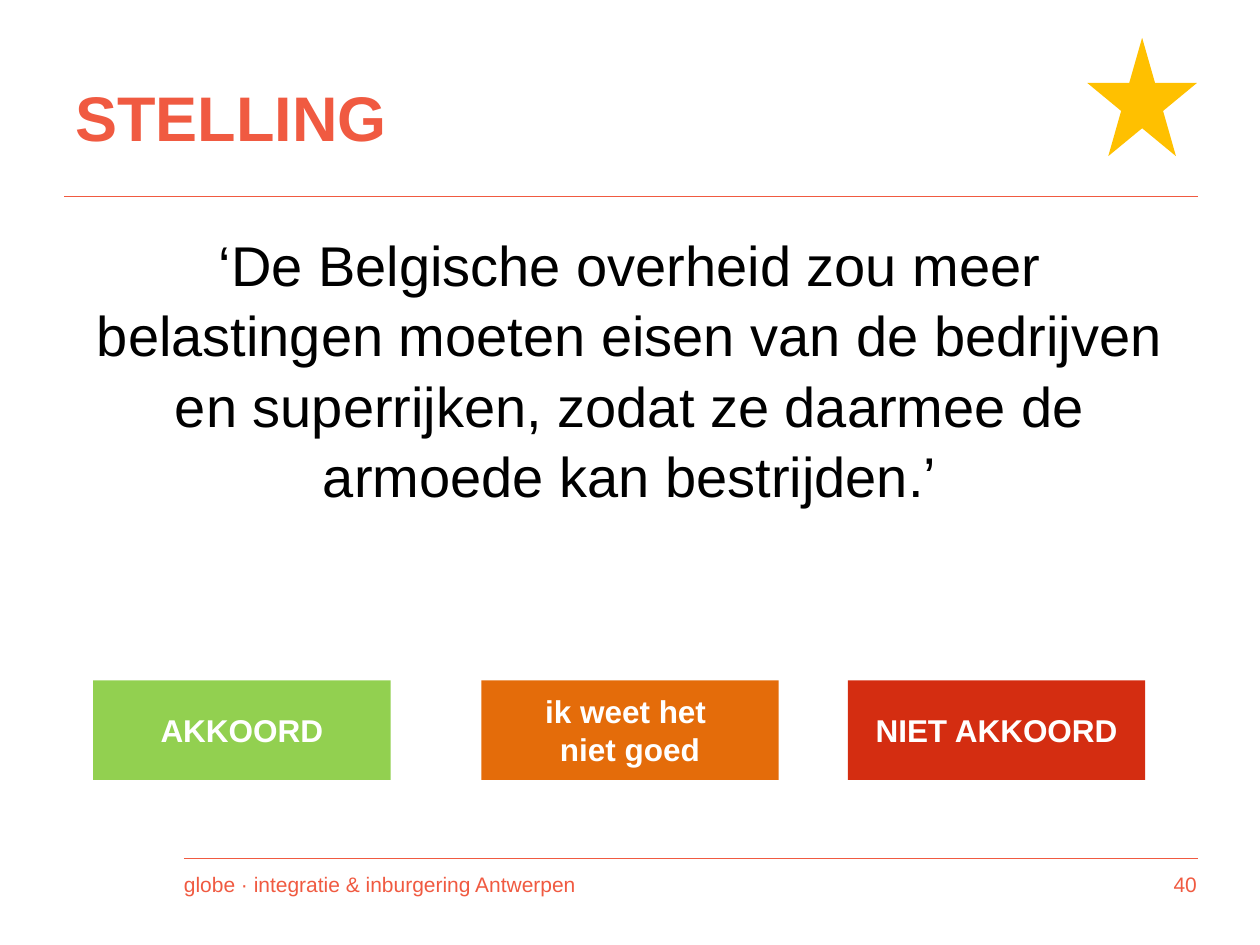
"""Build the STELLING slide: a statement with three answer buttons."""
from dataclasses import dataclass

from lxml import etree
from pptx import Presentation
from pptx.dml.color import RGBColor
from pptx.enum.shapes import MSO_CONNECTOR, MSO_SHAPE
from pptx.enum.text import MSO_ANCHOR, MSO_AUTO_SIZE, PP_ALIGN
from pptx.oxml import parse_xml
from pptx.oxml.ns import nsdecls, qn
from pptx.util import Inches, Pt

STRAIGHT = MSO_CONNECTOR.STRAIGHT
RECTANGLE, STAR = MSO_SHAPE.RECTANGLE, MSO_SHAPE.STAR_5_POINT
TOP, MIDDLE = MSO_ANCHOR.TOP, MSO_ANCHOR.MIDDLE
NO_FIT = MSO_AUTO_SIZE.NONE
LEFT, CENTER, RIGHT = PP_ALIGN.LEFT, PP_ALIGN.CENTER, PP_ALIGN.RIGHT


@dataclass(frozen=True)
class Theme:
    """Colours and type sizes of the slide."""
    font: str = "Arial"
    accent: str = "F05A41"
    ink: str = "000000"
    light: str = "FFFFFF"
    agree: str = "92D050"
    unsure: str = "E46C0A"
    disagree: str = "D42D11"
    star: str = "FFC000"
    title_size: int = 36
    body_size: int = 32
    button_size: int = 18
    footer_size: int = 12


theme = Theme()


def place(shape, left, top, width, height):
    """Move and size a shape, in inches."""
    shape.left, shape.top = Inches(left), Inches(top)
    shape.width, shape.height = Inches(width), Inches(height)


def write(shape, lines, size, color, align, anchor=MIDDLE, bold=False):
    """Fill a shape with one paragraph per line in a single style."""
    frame = shape.text_frame
    frame.text = "\n".join(lines)
    frame.word_wrap = True
    frame.auto_size = NO_FIT
    frame.vertical_anchor = anchor
    for para in frame.paragraphs:
        para.alignment = align
        para.font.name = theme.font
        para.font.size = Pt(size)
        para.font.bold = bold
        para.font.color.rgb = RGBColor.from_string(color)


deck = Presentation()
deck.slide_width, deck.slide_height = Inches(10), Inches(7.5)
page = deck.slides.add_slide(deck.slide_layouts[1])

margin, right_edge = 0.5, 9.5
content_width = right_edge - margin
footer_left, footer_top, footer_height = 1.46, 6.82, 0.4

for start, height in ((footer_left, 6.81), (0.51, 1.56)):
    rule = page.shapes.add_connector(
        STRAIGHT, Inches(start), Inches(height), Inches(9.51), Inches(height))
    rule.line.color.rgb = RGBColor.from_string(theme.accent)
    rule.line.width = Pt(0.5)
    etree.SubElement(rule.element.spPr, qn("a:effectLst"))

title = page.shapes.title
place(title, margin, 0.3, content_width, 1.25)
write(title, ["STELLING"], theme.title_size, theme.accent, LEFT, bold=True)

statement = page.placeholders[1]
place(statement, margin, 1.75, content_width, 4.76)
write(statement, [
    "‘De Belgische overheid zou meer belastingen moeten eisen van de bedrijven "
    "en superrijken, zodat ze daarmee de armoede kan bestrijden.’"],
    theme.body_size, theme.ink, CENTER, TOP)
para = statement.text_frame.paragraphs[0]
para.line_spacing = 1.05
para.space_before = Pt(0)
properties = para._p.get_or_add_pPr()
properties.set("marL", "0")
properties.set("indent", "0")
properties.find(qn("a:defRPr")).addprevious(
    parse_xml(f"<a:buNone {nsdecls('a')}/>"))

footers = (
    ("40", 8.86, 0.64, RIGHT, 0.1, 0),
    ("globe · integratie & inburgering Antwerpen", footer_left, 5.13, LEFT, 0, 0.1),
)
for text, left, width, align, inset_left, inset_right in footers:
    box = page.shapes.add_textbox(
        Inches(left), Inches(footer_top), Inches(width), Inches(footer_height))
    write(box, [text], theme.footer_size, theme.accent, align)
    box.text_frame.margin_left = Inches(inset_left)
    box.text_frame.margin_right = Inches(inset_right)

buttons = (
    (0.74, ["AKKOORD"], theme.agree),
    (3.82, ["ik weet het ", "niet goed"], theme.unsure),
    (6.73, ["NIET AKKOORD"], theme.disagree),
)
filled = []
for left, lines, color in buttons:
    button = page.shapes.add_shape(
        RECTANGLE, Inches(left), Inches(5.4), Inches(2.36), Inches(0.79))
    write(button, lines, theme.button_size, theme.light, CENTER, bold=True)
    filled.append((button, color))

star = page.shapes.add_shape(
    STAR, Inches(8.63), Inches(0.3), Inches(0.87), Inches(0.94))
filled.append((star, theme.star))

for shape, color in filled:
    shape.fill.solid()
    shape.fill.fore_color.rgb = RGBColor.from_string(color)
    shape.line.fill.background()
    shape.shadow.inherit = False

deck.save("out.pptx")
